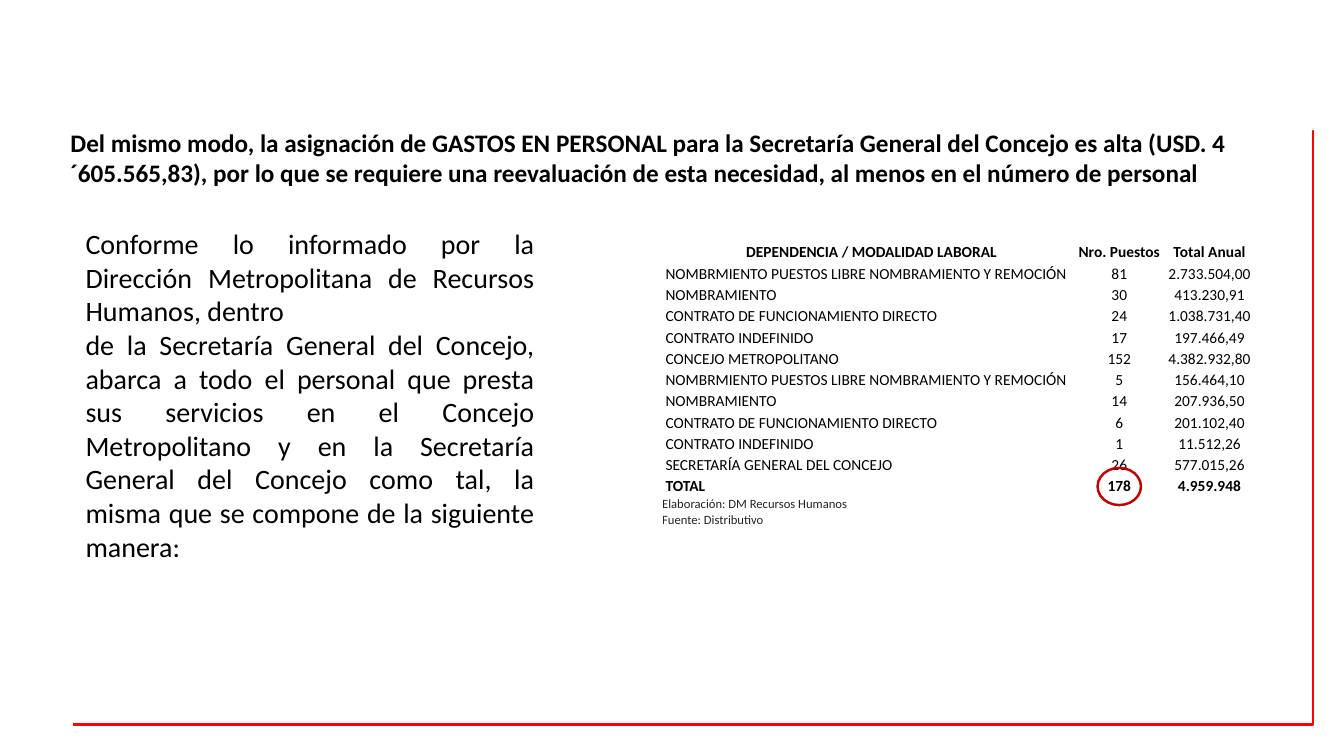
from lxml import etree
from pptx import Presentation
from pptx import util as u
from pptx.dml.color import RGBColor
from pptx.enum import shapes, text
from pptx.oxml.ns import qn

COLORS = {"ink": "000000", "note": "222222", "frame": "FF0000", "mark": "C00000"}
FONT = "Calibri"
TITLE = ("Del mismo modo, la asignación de GASTOS EN PERSONAL para la Secretaría General "
         "del Concejo es alta (USD. 4´605.565,83), por lo que se requiere una reevaluación "
         "de esta necesidad, al menos en el número de personal")
BODY = [
    "Conforme lo informado por la Dirección Metropolitana de Recursos Humanos, dentro",
    "de la Secretaría General del Concejo, abarca a todo el personal que presta sus "
    "servicios en el Concejo Metropolitano y en la Secretaría General del Concejo como "
    "tal, la misma que se compone de la siguiente manera:",
]
HEADER = ("DEPENDENCIA / MODALIDAD LABORAL", "Nro. Puestos", "Total Anual")
STAFF = [
    ("NOMBRMIENTO PUESTOS LIBRE NOMBRAMIENTO Y REMOCIÓN", "81", "2.733.504,00"),
    ("NOMBRAMIENTO", "30", "413.230,91"),
    ("CONTRATO DE FUNCIONAMIENTO DIRECTO", "24", "1.038.731,40"),
    ("CONTRATO INDEFINIDO", "17", "197.466,49"),
    ("CONCEJO METROPOLITANO", "152", "4.382.932,80"),
    ("NOMBRMIENTO PUESTOS LIBRE NOMBRAMIENTO Y REMOCIÓN", "5", "156.464,10"),
    ("NOMBRAMIENTO", "14", "207.936,50"),
    ("CONTRATO DE FUNCIONAMIENTO DIRECTO", "6", "201.102,40"),
    ("CONTRATO INDEFINIDO", "1", "11.512,26"),
    ("SECRETARÍA GENERAL DEL CONCEJO", "26", "577.015,26"),
]
TOTAL = ("TOTAL", "178", "4.959.948")
NOTES = [("Elaboración: DM Recursos Humanos", "", ""), ("Fuente: Distributivo", "", "")]


def color(name):
    """Return the named colour."""
    return RGBColor.from_string(COLORS[name])


def add_run(paragraph, words, size, bold=False, ink="ink"):
    """Add one styled run to a paragraph."""
    run = paragraph.add_run()
    run.text = words
    run.font.name, run.font.size, run.font.bold = FONT, u.Pt(size), bold
    run.font.color.rgb = color(ink)


def corner_frame(slide, left, top, width, height):
    """Draw the red line along the right and bottom edges of the box."""
    frame = slide.shapes.add_connector(
        shapes.MSO_CONNECTOR.ELBOW,
        u.Pt(left + width), u.Pt(top), u.Pt(left), u.Pt(top + height))
    frame.line.color.rgb = color("frame")
    frame.line.width = u.Pt(1.75)
    properties = frame._element.spPr
    guides = properties.find(qn("a:prstGeom")).find(qn("a:avLst"))
    etree.SubElement(guides, qn("a:gd"), name="adj1", fmla="val 100")
    etree.SubElement(properties, qn("a:effectLst"))


def text_block(slide, left, top, width, height, paragraphs, size, bold=False, align=None):
    """Place wrapped paragraphs in the box."""
    block = slide.shapes.add_textbox(u.Pt(left), u.Pt(top), u.Pt(width), u.Pt(height))
    frame = block.text_frame
    frame.word_wrap = True
    for index, words in enumerate(paragraphs):
        paragraph = frame.add_paragraph() if index else frame.paragraphs[0]
        paragraph.alignment = align
        add_run(paragraph, words, size, bold)


def fill_cell(cell, words, size, bold, ink, indent, align):
    """Write one borderless, bottom-anchored table cell."""
    cell.fill.background()
    cell.margin_left = cell.margin_right = cell.margin_top = cell.margin_bottom = 0
    cell.vertical_anchor = text.MSO_ANCHOR.BOTTOM
    paragraph = cell.text_frame.paragraphs[0]
    paragraph.alignment = align
    if words:
        paragraph._p.get_or_add_pPr().set("marL", str(u.Pt(indent)))
        add_run(paragraph, words, size, bold, ink)
    else:
        etree.SubElement(paragraph._p, qn("a:endParaRPr"), sz=str(size * 100))


def staff_table(slide, left, top, width, height):
    """Place the staff table in the box and circle its total number of posts."""
    posts_width, annual_width = 69, 60
    widths = (width - posts_width - annual_width, posts_width, annual_width)
    blank_height, row_height, note_height = 13.7, 15.2, 11.5
    rows = [(("", "", ""), 9, False, "ink", 0, blank_height),
            (HEADER, 11, True, "ink", 60, row_height)]
    rows += [(staff, 11, False, "ink", 2.4, row_height) for staff in STAFF]
    rows.append((TOTAL, 11, True, "ink", 2.4, row_height))
    total_bottom = top + sum(row[-1] for row in rows)
    rows += [(note, 9, False, "note", 0, note_height) for note in NOTES]

    table = slide.shapes.add_table(
        len(rows), len(widths), u.Pt(left), u.Pt(top), u.Pt(width), u.Pt(height)).table
    table.first_row = table.horz_banding = False
    for column, column_width in zip(table.columns, widths):
        column.width = u.Pt(column_width)
    for row, (words, size, bold, ink, indent, line_height) in zip(table.rows, rows):
        row.height = u.Pt(line_height)
        for index, cell in enumerate(row.cells):
            align = text.PP_ALIGN.CENTER if index else text.PP_ALIGN.LEFT
            fill_cell(cell, words[index], size, bold, ink, 0 if index else indent, align)

    circle_width, circle_height = 31, 26.6
    circle = slide.shapes.add_shape(
        shapes.MSO_SHAPE.OVAL,
        u.Pt(left + widths[0] + (posts_width - circle_width) / 2),
        u.Pt(total_bottom - 7 - circle_height / 2),
        u.Pt(circle_width), u.Pt(circle_height))
    circle.shadow.inherit = False
    circle.fill.background()
    circle.line.color.rgb = color("mark")
    circle.line.width = u.Pt(1.75)


def main():
    """Build and save the slide."""
    deck = Presentation()
    deck.slide_width, deck.slide_height = u.Pt(960), u.Pt(540)
    slide = deck.slides.add_slide(deck.slide_layouts[6])
    corner_frame(slide, 51.8, 93.6, 887, 424)
    text_block(slide, 43.2, 87.1, 860.4, 94.3, [TITLE], 18, bold=True)
    text_block(slide, 54, 158.4, 334.8, 249.8, BODY, 20, align=text.PP_ALIGN.JUSTIFY)
    staff_table(slide, 473, 158.4, 421, 219.6)
    deck.save("out.pptx")


if __name__ == "__main__":
    main()
